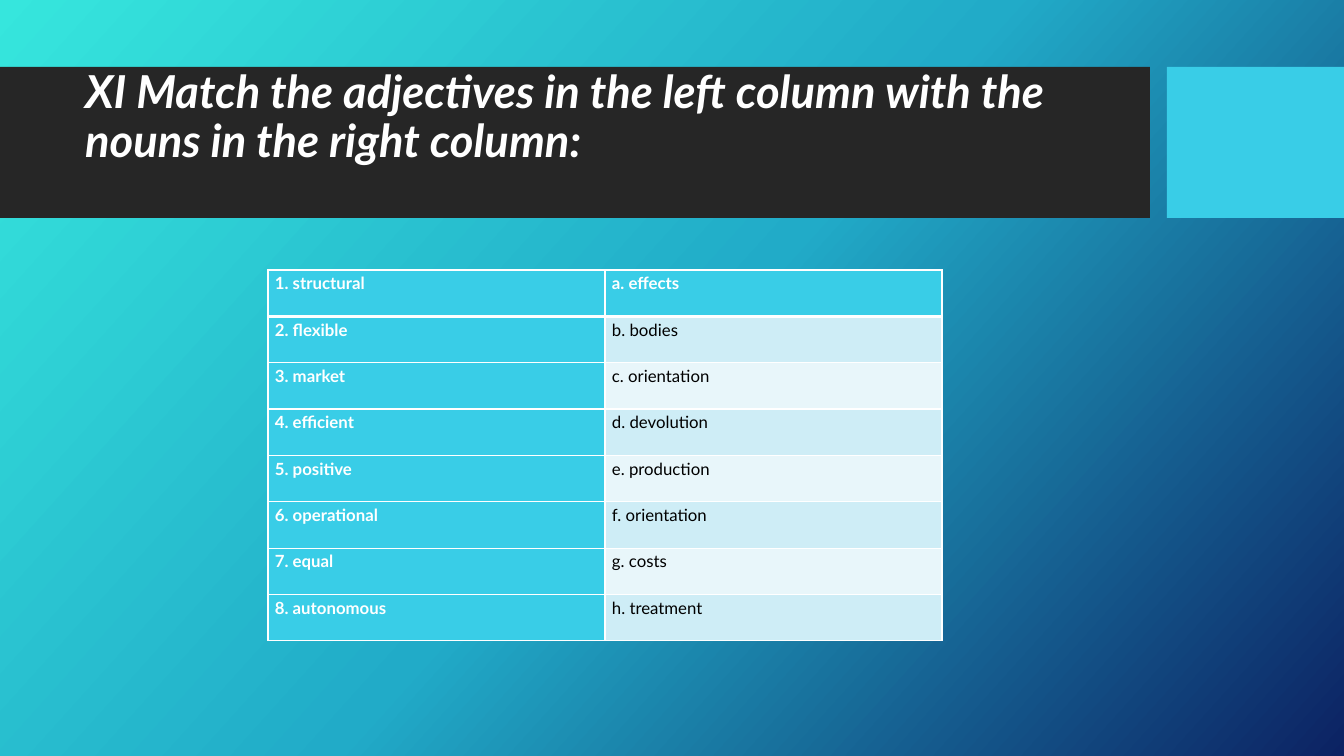
from dataclasses import dataclass

from pptx import Presentation
from pptx.dml.color import RGBColor
from pptx.enum.shapes import MSO_SHAPE as Preset
from pptx.enum.text import MSO_ANCHOR as Anchor, MSO_AUTO_SIZE as AutoSize, PP_ALIGN as Align
from pptx.oxml.ns import qn
from pptx.oxml.xmlchemy import OxmlElement as make_element
from pptx.util import Emu, Pt

SCALE = 12192000 / 1344


@dataclass(frozen=True)
class Theme:
    font: str = "Lato"
    title_size: float = 32.4
    cell_size: float = 12
    white: str = "FFFFFF"
    black: str = "000000"
    banner: str = "262626"
    accent: str = "39CDE7"
    bands: tuple = ("CEEDF6", "E8F6FA")
    gradient: tuple = ((0, "36E6DD"), (50, "21ABC8"), (100, "0C2263"))
    gradient_angle: int = 318
    thin: float = 1
    thick: float = 3


@dataclass(frozen=True)
class Block:
    left: int
    top: int
    width: int
    height: int
    color: str = ""


@dataclass(frozen=True)
class Pair:
    adjective: str
    noun: str


THEME = Theme()
BLOCKS = (
    Block(0, 67, 1150, 151, THEME.banner),
    Block(1167, 67, 177, 151, THEME.accent),
)
TITLE_AREA = Block(75, 83, 1059, 119)
PAIRS_AREA = Block(268, 270, 674, 371)
TITLE = "XI Match the adjectives in the left column with the nouns in the right column:"
PAIRS = (
    Pair("1. structural", "a. effects"),
    Pair("2. flexible", "b. bodies"),
    Pair("3. market", "c. orientation"),
    Pair("4. efficient", "d. devolution"),
    Pair("5. positive", "e. production"),
    Pair("6. operational", "f. orientation"),
    Pair("7. equal", "g. costs"),
    Pair("8. autonomous", "h. treatment"),
)


def px(length: int) -> Emu:
    return Emu(round(length * SCALE))


def bounds(block: Block) -> tuple:
    return px(block.left), px(block.top), px(block.width), px(block.height)


def write(frame, text: str, *, size: float, color: str, spacing: float,
          bold: bool = False, italic: bool = False) -> None:
    paragraph = frame.paragraphs[0]
    paragraph.alignment = Align.LEFT
    paragraph.line_spacing = spacing
    run = paragraph.add_run()
    run.text = text
    run.font.name = THEME.font
    run.font.size = Pt(size)
    run.font.bold = bold
    run.font.italic = italic
    run.font.color.rgb = RGBColor.from_string(color)


def paint_background(slide) -> None:
    fill = slide.background.fill
    fill.gradient()
    fill.gradient_angle = THEME.gradient_angle
    stops = next(slide.element.iter(qn("a:gsLst")))
    stops.clear()
    for percent, color in THEME.gradient:
        stop = make_element("a:gs")
        stop.set("pos", str(percent * 1000))
        tone = make_element("a:srgbClr")
        tone.set("val", color)
        stop.append(tone)
        stops.append(stop)


def draw_block(slide, block: Block) -> None:
    shape = slide.shapes.add_shape(Preset.RECTANGLE, *bounds(block))
    shape.shadow.inherit = False
    shape.fill.solid()
    shape.fill.fore_color.rgb = RGBColor.from_string(block.color)
    shape.line.fill.background()


def place_title(slide) -> None:
    title = slide.shapes.title
    title.left, title.top, title.width, title.height = bounds(TITLE_AREA)
    title.element.getparent().append(title.element)
    frame = title.text_frame
    frame.word_wrap = True
    frame.auto_size = AutoSize.NONE
    frame.vertical_anchor = Anchor.MIDDLE
    frame.margin_left = frame.margin_right = px(10)
    frame.margin_top, frame.margin_bottom = px(0), px(49)
    write(frame, TITLE, size=THEME.title_size, color=THEME.white, spacing=0.9,
          bold=True, italic=True)


def border(cell, side: str, width: float) -> None:
    line = make_element(f"a:ln{side}")
    line.set("w", str(Pt(width)))
    solid = make_element("a:solidFill")
    tone = make_element("a:srgbClr")
    tone.set("val", THEME.white)
    solid.append(tone)
    line.append(solid)
    cell._tc.get_or_add_tcPr().append(line)


def fill_cell(cell, text: str, row: int, column: int) -> None:
    strong = row == 0 or column == 0
    cell.margin_left = cell.margin_right = px(7)
    cell.margin_top = cell.margin_bottom = 0
    widths = {
        "L": THEME.thin,
        "R": THEME.thin,
        "T": THEME.thick if row == 1 else THEME.thin,
        "B": THEME.thick if row == 0 else THEME.thin,
    }
    for side, width in widths.items():
        border(cell, side, width)
    cell.fill.solid()
    background = THEME.accent if strong else THEME.bands[(row - 1) % 2]
    cell.fill.fore_color.rgb = RGBColor.from_string(background)
    write(cell.text_frame, text, size=THEME.cell_size, spacing=1.15, bold=strong,
          color=THEME.white if strong else THEME.black)


def draw_pairs(slide) -> None:
    table = slide.shapes.add_table(len(PAIRS), 2, *bounds(PAIRS_AREA)).table
    table.first_col = True
    for row, pair in enumerate(PAIRS):
        for column, text in enumerate((pair.adjective, pair.noun)):
            fill_cell(table.cell(row, column), text, row, column)


def main() -> None:
    deck = Presentation()
    deck.slide_width, deck.slide_height = px(1344), px(756)
    slide = deck.slides.add_slide(deck.slide_layouts[5])
    paint_background(slide)
    for block in BLOCKS:
        draw_block(slide, block)
    place_title(slide)
    draw_pairs(slide)
    deck.save("out.pptx")


if __name__ == "__main__":
    main()
